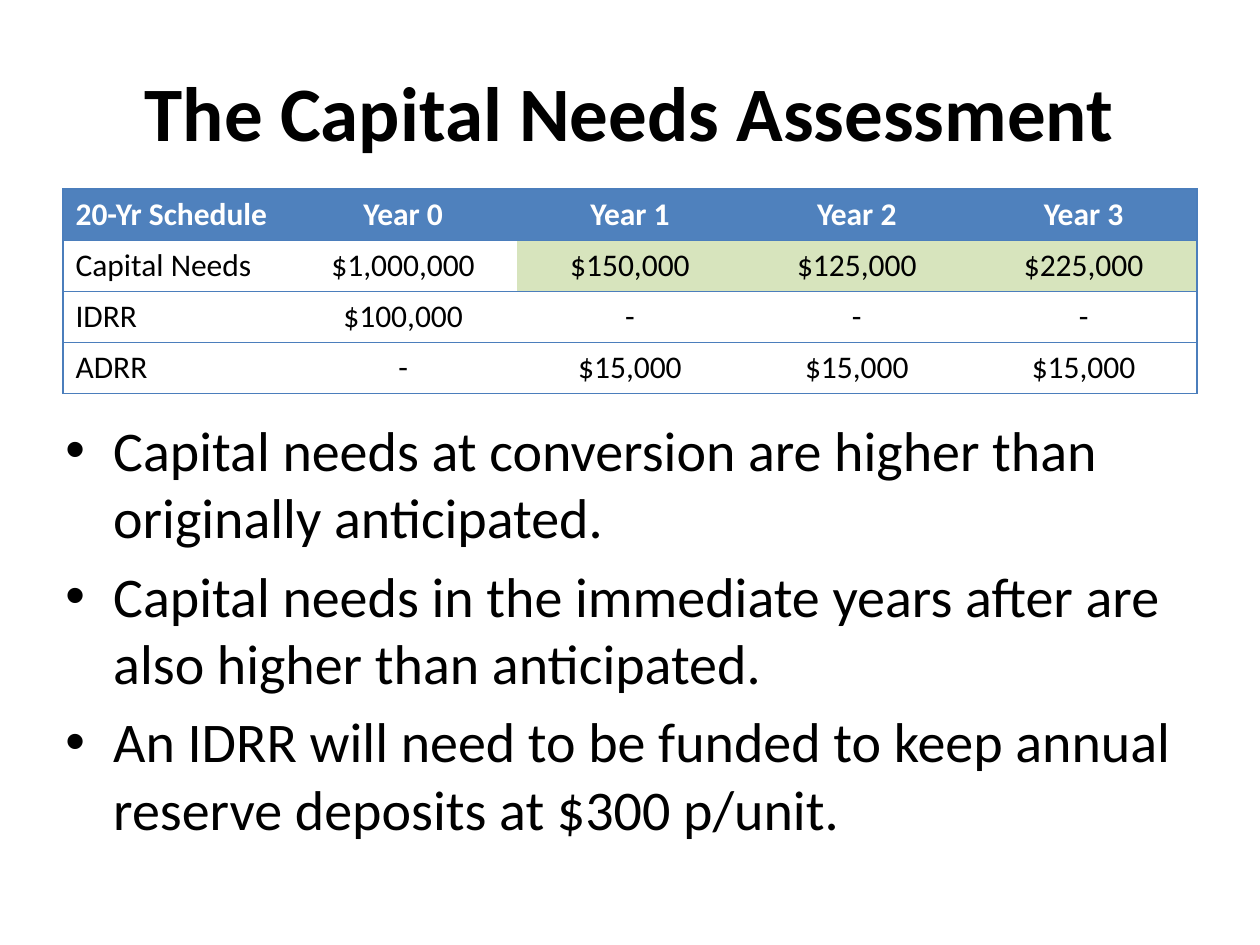
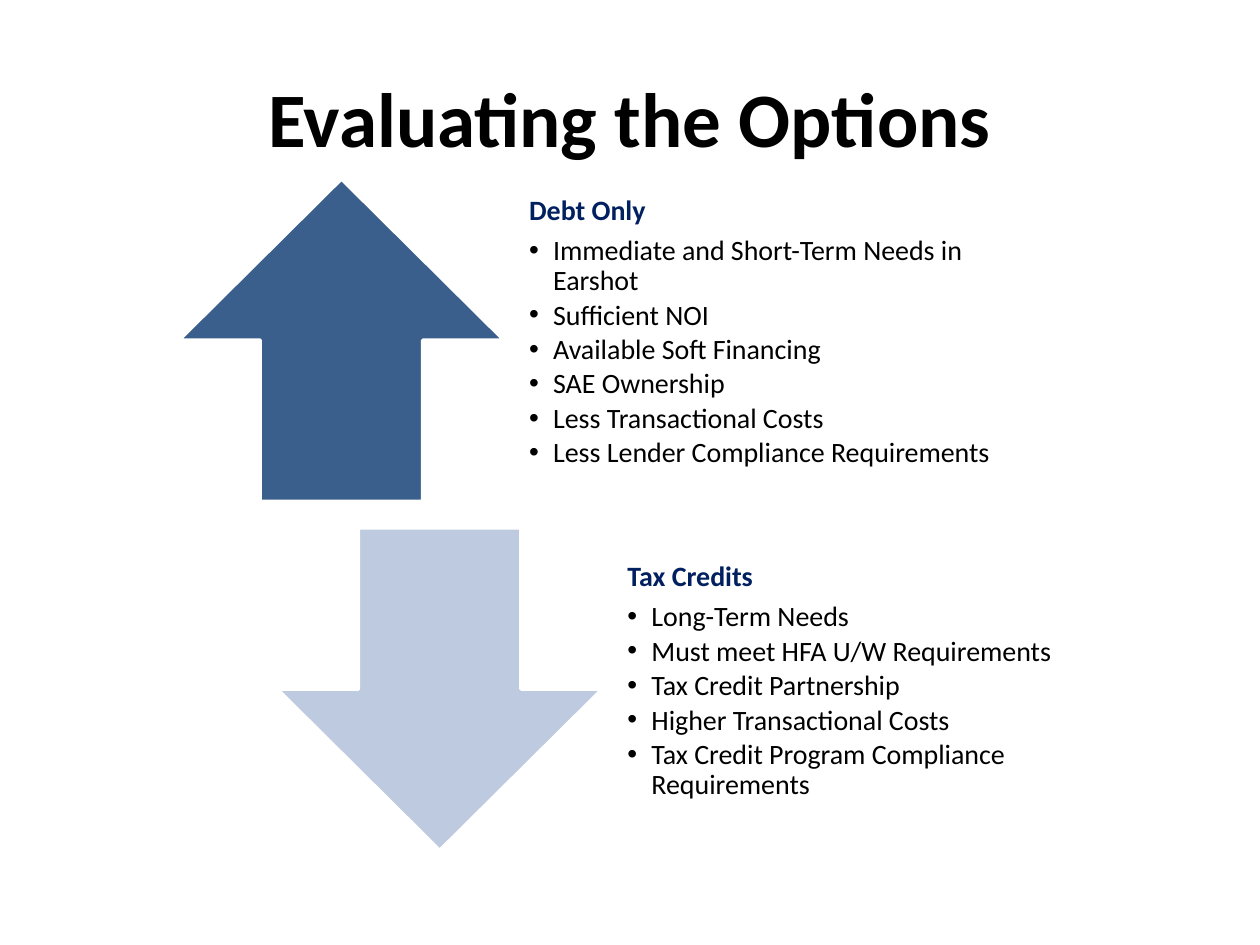
from lxml import etree
from pptx import Presentation
from pptx.dml.color import RGBColor
from pptx.enum import shapes, text
from pptx.oxml.ns import qn
from pptx.util import Emu, Inches, Pt

FONT = "Calibri"
BLACK, WHITE, NAVY = "000000", "FFFFFF", "002060"
HEADER_BLUE, BORDER_BLUE, GREEN = "4F81BD", "4B7EBC", "D7E4BD"
PLAIN_TABLE_STYLE = "{2D5ABB26-0587-4C30-8999-92F81FD0307C}"

SCHEDULE = [
    ["20-Yr Schedule", "Year 0", "Year 1", "Year 2", "Year 3"],
    ["Capital Needs", "$1,000,000", "$150,000", "$125,000", "$225,000"],
    ["IDRR", "$100,000", "-", "-", "-"],
    ["ADRR", "-", "$15,000", "$15,000", "$15,000"],
]
HIGHLIGHTED = {(1, 2), (1, 3), (1, 4)}

FINDINGS = [
    "Capital needs at conversion are higher than originally anticipated.",
    "Capital needs in the immediate years after are also higher than anticipated.",
    "An IDRR will need to be funded to keep annual reserve deposits at $300 p/unit.",
]

OPTIONS = [
    ("Debt Only", shapes.MSO_SHAPE.UP_ARROW, "3A5F8C", [
        "Immediate and Short-Term Needs in Earshot",
        "Sufficient NOI",
        "Available Soft Financing",
        "SAE Ownership",
        "Less Transactional Costs",
        "Less Lender Compliance Requirements",
    ]),
    ("Tax Credits", shapes.MSO_SHAPE.DOWN_ARROW, "BECADF", [
        "Long-Term Needs",
        "Must meet HFA U/W Requirements",
        "Tax Credit Partnership",
        "Higher Transactional Costs",
        "Tax Credit Program Compliance Requirements",
    ]),
]


def colour(hex_string):
    return RGBColor.from_string(hex_string)


def format_runs(paragraph, size, hex_string=BLACK, bold=False):
    for run in paragraph.runs:
        run.font.name = FONT
        run.font.size = Pt(size)
        run.font.bold = bold
        run.font.color.rgb = colour(hex_string)


def add_bullet(paragraph, indent):
    """Give the paragraph a round bullet with a hanging indent in inches."""
    properties = paragraph._p.get_or_add_pPr()
    properties.set("marL", str(Inches(indent)))
    properties.set("indent", str(-Inches(indent)))
    etree.SubElement(properties, qn("a:buFont")).set("typeface", "Arial")
    etree.SubElement(properties, qn("a:buChar")).set("char", "•")


def add_border(cell, side):
    line = etree.SubElement(cell._tc.get_or_add_tcPr(), qn(f"a:ln{side}"), w=str(Pt(0.75)))
    fill = etree.SubElement(line, qn("a:solidFill"))
    etree.SubElement(fill, qn("a:srgbClr")).set("val", BORDER_BLUE)


def add_titled_slide(presentation, title_text, top):
    slide = presentation.slides.add_slide(presentation.slide_layouts[5])
    title = slide.shapes.title
    title.left, title.top = Inches(0.5), Inches(top)
    title.width, title.height = Inches(9), Inches(1.25)
    frame = title.text_frame
    frame.text = title_text
    frame.vertical_anchor = text.MSO_ANCHOR.MIDDLE
    frame.paragraphs[0].alignment = text.PP_ALIGN.CENTER
    format_runs(frame.paragraphs[0], 44, bold=True)
    return slide


def add_text_frame(slide, left, top, width, height, lines):
    box = slide.shapes.add_textbox(Inches(left), Inches(top), Inches(width), Inches(height))
    frame = box.text_frame
    frame.word_wrap = True
    frame.text = "\n".join(lines)
    return frame


def add_schedule(slide):
    row_count, column_count = len(SCHEDULE), len(SCHEDULE[0])
    frame = slide.shapes.add_table(row_count, column_count, Inches(0.5), Inches(1.5),
                                   Inches(9), Inches(1.62))
    for style in frame.element.iter(qn("a:tableStyleId")):
        style.text = PLAIN_TABLE_STYLE
    table = frame.table
    table.horz_banding = False
    for row in table.rows:
        row.height = Emu(Inches(1.62) // row_count)
    for row, values in enumerate(SCHEDULE):
        for column, value in enumerate(values):
            cell = table.cell(row, column)
            cell.text = value
            paragraph = cell.text_frame.paragraphs[0]
            if column > 0:
                paragraph.alignment = text.PP_ALIGN.CENTER
            header = row == 0
            format_runs(paragraph, 18, WHITE if header else BLACK, header)
            if column == 0:
                add_border(cell, "L")
            if column == column_count - 1:
                add_border(cell, "R")
            add_border(cell, "T")
            add_border(cell, "B")
            cell.fill.solid()
            body = GREEN if (row, column) in HIGHLIGHTED else WHITE
            cell.fill.fore_color.rgb = colour(HEADER_BLUE if header else body)


def add_findings(slide):
    frame = add_text_frame(slide, 0.42, 3.25, 9.08, 3.75, FINDINGS)
    for index, paragraph in enumerate(frame.paragraphs):
        add_bullet(paragraph, 0.38)
        if index:
            paragraph.space_before = Pt(6.4)
        format_runs(paragraph, 32)


def add_option(slide, index, heading, arrow_kind, fill, points):
    left, top, height = 1.42 + 0.78 * index, 1.42 + 2.77 * index, 2.56
    arrow = slide.shapes.add_shape(arrow_kind, Inches(left), Inches(top),
                                   Inches(2.58), Inches(height))
    arrow.shadow.inherit = False
    arrow.fill.solid()
    arrow.fill.fore_color.rgb = colour(fill)
    arrow.line.color.rgb = colour(WHITE)
    arrow.line.width = Pt(2)

    frame = add_text_frame(slide, left + 2.66, top, 4.39, height, [heading] + points)
    frame.vertical_anchor = text.MSO_ANCHOR.MIDDLE
    frame.margin_left = frame.margin_right = frame.margin_bottom = Inches(0.12)
    frame.margin_top = 0
    for number, paragraph in enumerate(frame.paragraphs):
        is_heading = number == 0
        if not is_heading:
            paragraph.level = 1
            add_bullet(paragraph, 0.19)
        paragraph.line_spacing = 0.9
        paragraph.space_after = Pt(5.6 if is_heading else 2.4)
        format_runs(paragraph, 16, NAVY if is_heading else BLACK, is_heading)


def main():
    presentation = Presentation()
    presentation.slide_width, presentation.slide_height = Inches(10), Inches(7.5)

    assessment = add_titled_slide(presentation, "The Capital Needs Assessment", 0.25)
    add_schedule(assessment)
    add_findings(assessment)

    evaluation = add_titled_slide(presentation, "Evaluating the Options", 0.3)
    for index, option in enumerate(OPTIONS):
        add_option(evaluation, index, *option)

    presentation.save("out.pptx")


if __name__ == "__main__":
    main()
